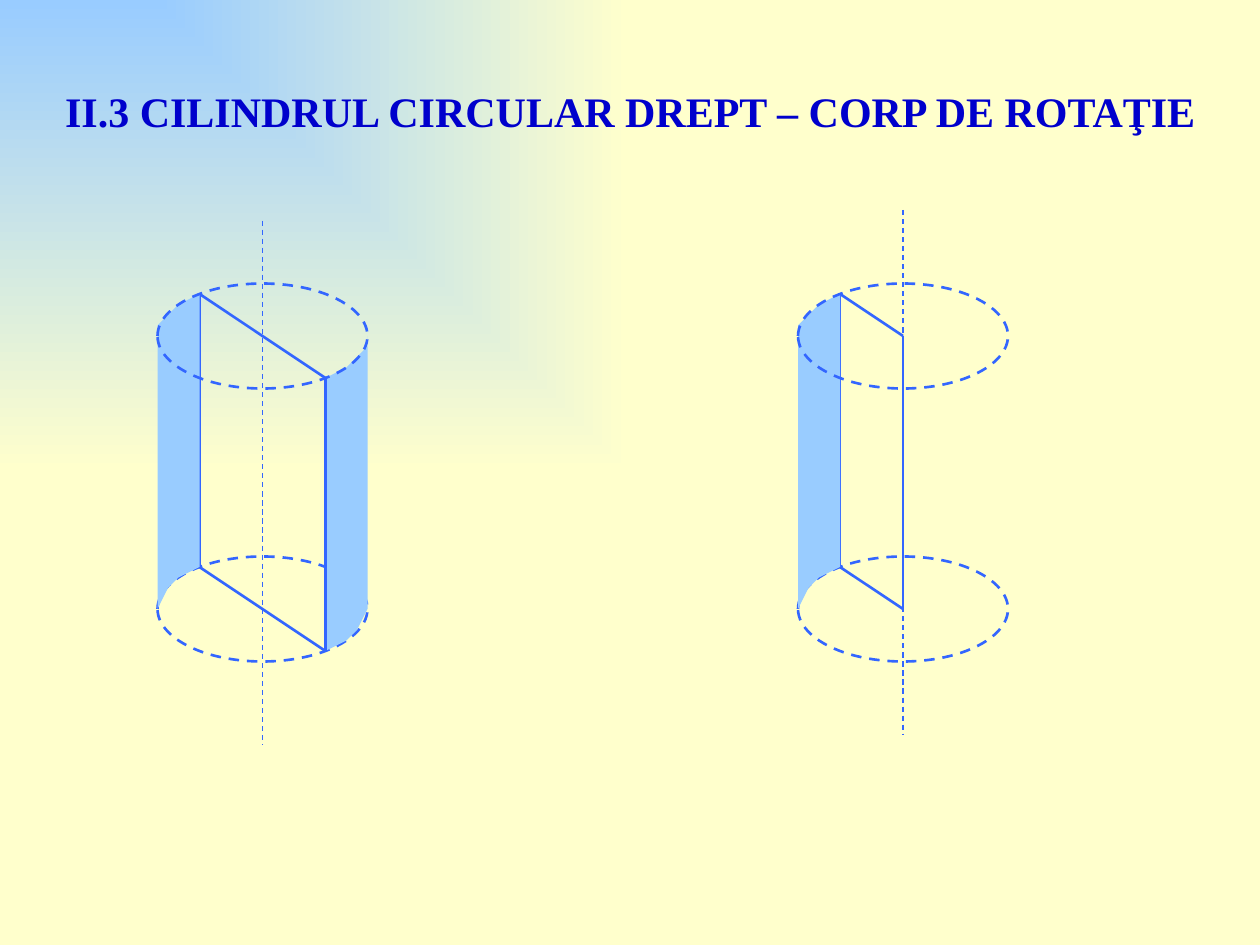
from dataclasses import dataclass

from lxml import etree
from pptx import Presentation
from pptx import util as u
from pptx.dml.color import RGBColor as Rgb
from pptx.enum import dml, shapes, text
from pptx.oxml.ns import qn

PX = u.Inches(1) // 96


@dataclass(frozen=True)
class Theme:
    sky: Rgb = Rgb(0x99, 0xCC, 0xFF)
    cream: Rgb = Rgb(0xFF, 0xFF, 0xCC)
    ink: Rgb = Rgb(0x33, 0x66, 0xFF)
    head: Rgb = Rgb(0x00, 0x00, 0xCC)
    font: str = "Times New Roman"
    size: float = 24
    thin: float = 0.75
    bold: float = 1.5


def apply(item, **vals):
    for name, val in vals.items():
        setattr(item, name, val)


class Page:
    def __init__(self, slide, theme):
        self.slide, self.theme = slide, theme

    def back(self):
        """Fade from the top left corner."""
        fill = self.slide.background.fill
        fill.gradient()
        for stop, color in zip(fill.gradient_stops, (self.theme.sky, self.theme.cream)):
            stop.color.rgb = color
        grad = next(self.slide.element.iter(qn("a:gradFill")))
        old = grad.find(qn("a:lin"))
        fade = etree.Element(qn("a:path"), path="rect")
        etree.SubElement(fade, qn("a:fillToRect"), r="100000", b="100000")
        grad.replace(old, fade)

    def title(self, words, x, y, w, h):
        box = self.slide.shapes.title
        apply(box, left=x * PX, top=y * PX, width=w * PX, height=h * PX)
        frame = box.text_frame
        apply(frame, text=words, word_wrap=True, margin_top=9 * PX,
              auto_size=text.MSO_AUTO_SIZE.NONE,
              vertical_anchor=text.MSO_ANCHOR.TOP)
        para = frame.paragraphs[0]
        para.alignment = text.PP_ALIGN.LEFT
        font = para.runs[0].font
        apply(font, name=self.theme.font, size=u.Pt(self.theme.size), bold=True)
        font.color.rgb = self.theme.head

    def stroke(self, line, width, dash):
        line.color.rgb = self.theme.ink
        line.width = u.Pt(width)
        if dash:
            line.dash_style = dml.MSO_LINE.DASH

    def line(self, start, end, thin=False, dash=False):
        ends = [n * PX for n in (*start, *end)]
        link = self.slide.shapes.add_connector(shapes.MSO_CONNECTOR.STRAIGHT, *ends)
        self.stroke(link.line, self.theme.thin if thin else self.theme.bold, dash)
        etree.SubElement(link.element.spPr, qn("a:effectLst"))

    def ring(self, x, y, rx, ry):
        """Dashed ellipse around a centre."""
        box = [n * PX for n in (x - rx, y - ry, 2 * rx, 2 * ry)]
        oval = self.slide.shapes.add_shape(shapes.MSO_SHAPE.OVAL, *box)
        oval.shadow.inherit = False
        oval.fill.background()
        self.stroke(oval.line, self.theme.bold, dash=True)

    def band(self, x, y, dots):
        """Filled piece of the side wall, dots counted from the centre."""
        dots = [(x + dx, y + dy) for dx, dy in dots]
        pen = self.slide.shapes.build_freeform(*dots[0], scale=PX)
        pen.add_line_segments(dots[1:], close=True)
        wall = pen.convert_to_shape()
        wall.shadow.inherit = False
        wall.fill.solid()
        wall.fill.fore_color.rgb = self.theme.sky
        wall.line.fill.background()

    def solid(self, x, y, tall, axis, near, bands):
        """Cylinder on axis x, with a cut from the far rim to the near point."""
        low = y + tall
        far = (-48, -32)
        self.line((x, axis), (x, axis + 400), thin=True, dash=True)
        self.ring(x, low, 80, 40)

        # Cut through both bases
        for base in (y, low):
            self.line((x + far[0], base + far[1]), (x + near[0], base + near[1]))

        # Upright edges and side wall
        def edge(dx, dy):
            self.line((x + dx, y + dy), (x + dx, low + dy))

        edge(*far)
        for dots in bands:
            self.band(x, y, dots)
        edge(*near)
        self.ring(x, y, 80, 40)


LEFT = [(-80, 0), (-80, -8), (-72, -16), (-64, -24), (-48, -32),
        (-48, 176), (-64, 184), (-72, 192), (-80, 208)]
RIGHT = [(48, 32), (64, 24), (80, 8), (80, 0),
         (80, 208), (72, 224), (64, 232), (48, 240)]


def main():
    deck = Presentation()
    apply(deck, slide_width=960 * PX, slide_height=720 * PX)
    page = Page(deck.slides.add_slide(deck.slide_layouts[5]), Theme())

    # Background and heading
    page.back()
    page.title("II.3 CILINDRUL CIRCULAR DREPT – CORP DE ROTAŢIE", 40, 56, 896, 48)

    # Full turn of the axial section, then half of it
    page.solid(200, 256, 208, axis=168, near=(48, 32), bands=[RIGHT, LEFT])
    page.solid(688, 256, 208, axis=160, near=(0, 0), bands=[LEFT])

    deck.save("out.pptx")


if __name__ == "__main__":
    main()
